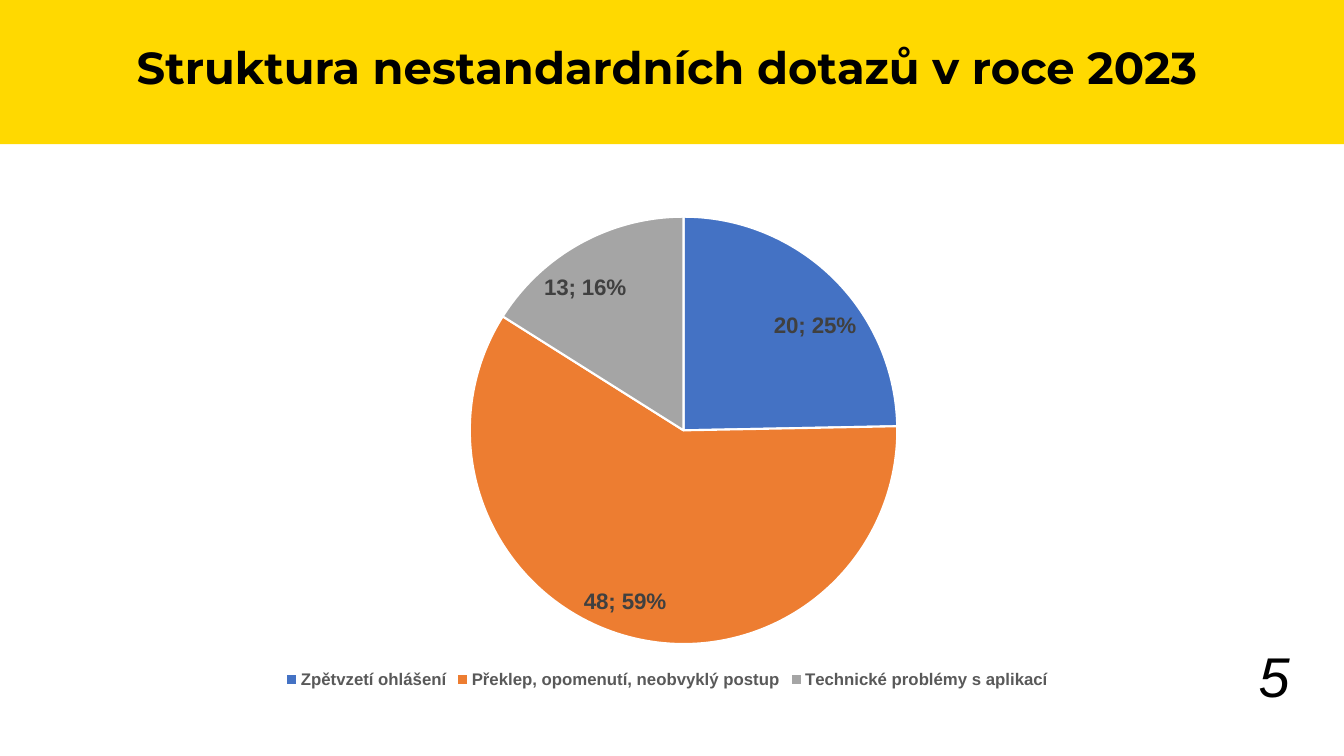
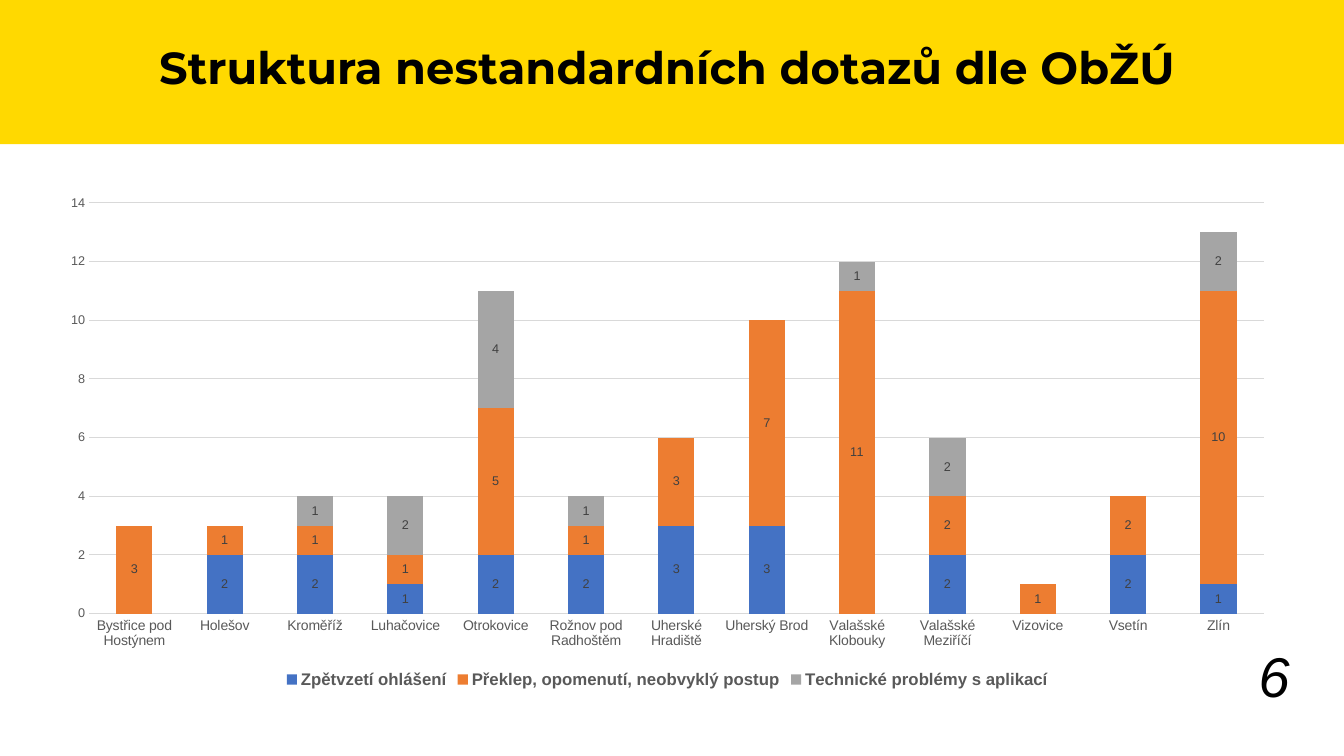
import dataclasses

import lxml.etree
import pptx
import pptx.chart.data
import pptx.dml.color
import pptx.enum.chart
import pptx.enum.shapes
import pptx.enum.text
import pptx.oxml.ns
import pptx.oxml.xmlchemy
import pptx.util

PX = 9144


@dataclasses.dataclass(frozen=True)
class Theme:
    band: str = "FFD900"
    ink: str = "000000"
    paper: str = "FFFFFF"
    muted: str = "595959"
    label: str = "404040"
    grid: str = "D9D9D9"
    series: tuple = ("4472C4", "ED7D31", "A5A5A5")
    title_font: str = "Montserrat"
    body_font: str = "Arial"
    title_size: int = 32
    number_size: int = 40
    pie_label_size: int = 16
    legend_size: int = 12
    category_size: int = 10
    value_size: int = 9


T = Theme()
SLIDE = (0, 0, 1333, 750)
BAND = (0, 0, 1333, 143)
TITLE = (46, 40, 1232, 102)
NUMBER = (989, 651, 300, 57)
CHART = (46, 184, 1232, 503)
PIE_PLOT = (420, 31, 424, 424)

REASONS = ["Zpětvzetí ohlášení", "Překlep, opomenutí, neobvyklý postup",
           "Technické problémy s aplikací"]
TOTALS = [20, 48, 13]
BY_OFFICE = {
    "Bystřice pod Hostýnem": (None, 3, None),
    "Holešov": (2, 1, None),
    "Kroměříž": (2, 1, 1),
    "Luhačovice": (1, 1, 2),
    "Otrokovice": (2, 5, 4),
    "Rožnov pod Radhoštěm": (2, 1, 1),
    "Uherské Hradiště": (3, 3, None),
    "Uherský Brod": (3, 7, None),
    "Valašské Klobouky": (None, 11, 1),
    "Valašské Meziříčí": (2, 2, 2),
    "Vizovice": (None, 1, None),
    "Vsetín": (2, 2, None),
    "Zlín": (1, 10, 2),
}


def emu(box):
    return [v * PX for v in box]


def rgb(color):
    return pptx.dml.color.RGBColor.from_string(color)


def style_font(font, size, color, bold=False, italic=False, name=T.body_font):
    font.name = name
    font.size = pptx.util.Pt(size)
    font.color.rgb = rgb(color)
    font.bold = bold
    font.italic = italic


def fill_solid(fill, color):
    fill.solid()
    fill.fore_color.rgb = rgb(color)


def add_band(s, box):
    sp = s.shapes.add_shape(pptx.enum.shapes.MSO_SHAPE.RECTANGLE, *emu(box))
    sp.shadow.inherit = False
    fill_solid(sp.fill, T.band)
    sp.line.fill.background()


def add_text(s, box, text, align, anchor, **font):
    tf = s.shapes.add_textbox(*emu(box)).text_frame
    tf.word_wrap = True
    tf.vertical_anchor = anchor
    tf.text = text
    p = tf.paragraphs[0]
    p.alignment = align
    style_font(p.runs[0].font, **font)
    return p


def add_frame(prs, title, number):
    s = prs.slides.add_slide(prs.slide_layouts[6])
    fill_solid(s.background.fill, T.paper)
    add_band(s, BAND)
    align, anchor = pptx.enum.text.PP_ALIGN, pptx.enum.text.MSO_ANCHOR
    add_text(s, NUMBER, str(number), align.RIGHT, anchor.BOTTOM,
             size=T.number_size, color=T.ink, italic=True)
    p = add_text(s, TITLE, title, align.CENTER, anchor.TOP, size=T.title_size,
                 color=T.ink, bold=True, name=T.title_font)
    p.line_spacing = 0.9
    return s


def add_chart(s, box, kind, categories, series):
    data = pptx.chart.data.CategoryChartData()
    data.categories = categories
    for name, values in series:
        data.add_series(name, values)
    chart = s.shapes.add_chart(kind, *emu(box), data).chart
    chart.has_title = False
    style_font(chart.font, T.category_size, T.ink)
    chart.has_legend = True
    chart.legend.position = pptx.enum.chart.XL_LEGEND_POSITION.BOTTOM
    chart.legend.include_in_layout = False
    style_font(chart.legend.font, T.legend_size, T.muted, bold=True)
    return chart


def place_plot(chart, box, plot):
    area = chart.plots[0]._element.getparent()
    for old in area.findall(pptx.oxml.ns.qn("c:layout")):
        area.remove(old)
    layout = pptx.oxml.xmlchemy.OxmlElement("c:layout")
    manual = lxml.etree.SubElement(layout, pptx.oxml.ns.qn("c:manualLayout"))
    x, y, w, h = plot
    settings = [("layoutTarget", "inner"), ("xMode", "edge"), ("yMode", "edge"),
                ("x", x / box[2]), ("y", y / box[3]),
                ("w", w / box[2]), ("h", h / box[3])]
    for tag, value in settings:
        lxml.etree.SubElement(manual, pptx.oxml.ns.qn("c:" + tag)).set("val", str(value))
    area.insert(0, layout)


def add_pie(s, box):
    chart = add_chart(s, box, pptx.enum.chart.XL_CHART_TYPE.PIE, REASONS,
                      [("Series 1", TOTALS)])
    place_plot(chart, box, PIE_PLOT)
    plot = chart.plots[0]
    plot.vary_by_categories = True
    ser = plot.series[0]
    for i, color in enumerate(T.series):
        fmt = ser.points[i].format
        fill_solid(fmt.fill, color)
        fmt.line.color.rgb = rgb(T.paper)
        fmt.line.width = pptx.util.Pt(1.5)
    labels = ser.data_labels
    labels.show_value = True
    labels.show_percentage = True
    labels.position = pptx.enum.chart.XL_LABEL_POSITION.BEST_FIT
    style_font(labels.font, T.pie_label_size, T.label, bold=True)
    separator = pptx.oxml.xmlchemy.OxmlElement("c:separator")
    separator.text = "; "
    labels._element.find(pptx.oxml.ns.qn("c:showBubbleSize")).addnext(separator)


def style_axis(axis, size):
    axis.major_tick_mark = pptx.enum.chart.XL_TICK_MARK.NONE
    axis.minor_tick_mark = pptx.enum.chart.XL_TICK_MARK.NONE
    axis.format.line.fill.background()
    style_font(axis.tick_labels.font, size, T.muted)


def add_columns(s, box):
    chart = add_chart(s, box, pptx.enum.chart.XL_CHART_TYPE.COLUMN_STACKED,
                      list(BY_OFFICE), zip(REASONS, zip(*BY_OFFICE.values())))
    plot = chart.plots[0]
    plot.vary_by_categories = False
    plot.gap_width = 150
    plot.overlap = 100
    for ser, color in zip(plot.series, T.series):
        fill_solid(ser.format.fill, color)
        ser.data_labels.show_value = True
        style_font(ser.data_labels.font, T.value_size, T.label)
    style_axis(chart.category_axis, T.category_size)
    style_axis(chart.value_axis, T.value_size)
    chart.value_axis.has_major_gridlines = True
    line = chart.value_axis.major_gridlines.format.line
    line.color.rgb = rgb(T.grid)
    line.width = pptx.util.Pt(0.75)


def main():
    prs = pptx.Presentation()
    prs.slide_width, prs.slide_height = emu(SLIDE)[2:]
    add_pie(add_frame(prs, "Struktura nestandardních dotazů v roce 2023", 5), CHART)
    add_columns(add_frame(prs, "Struktura nestandardních dotazů dle ObŽÚ", 6), CHART)
    prs.save("out.pptx")


if __name__ == "__main__":
    main()
